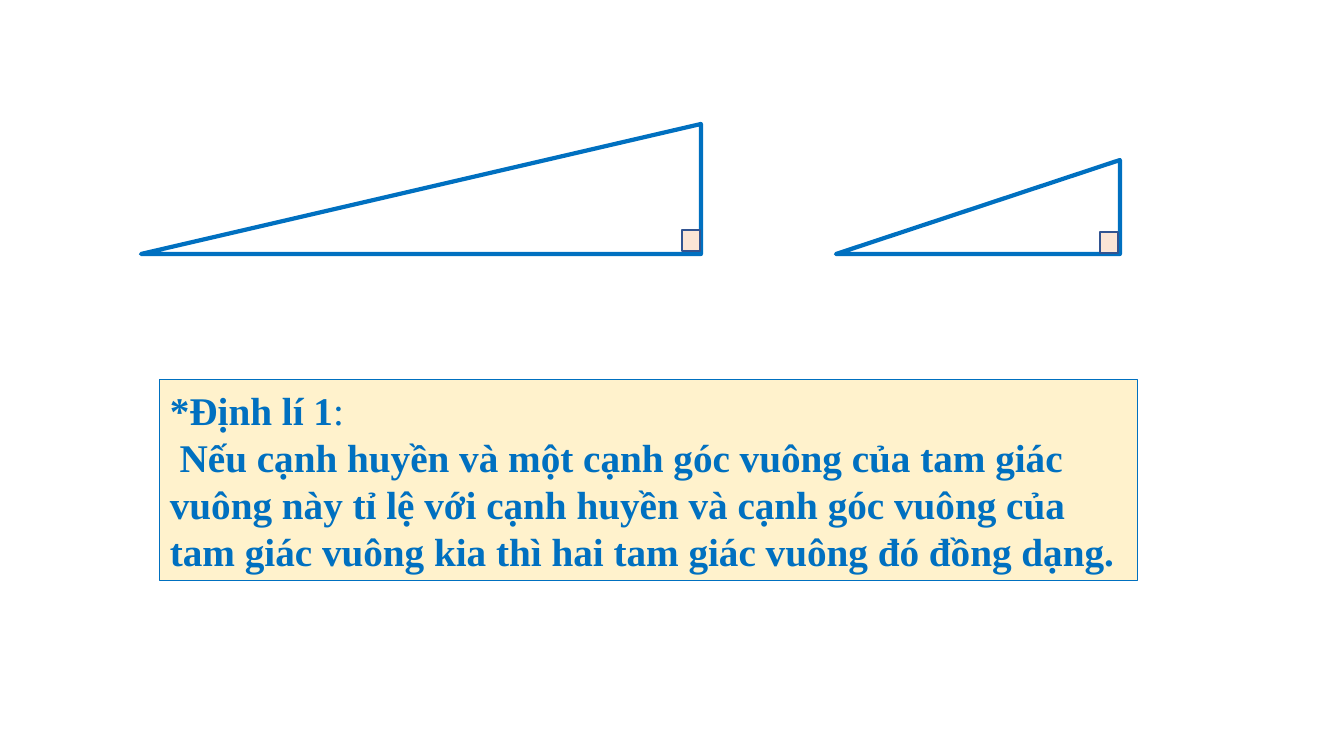
from pptx import Presentation
from pptx.dml.color import RGBColor
from pptx.enum.shapes import MSO_SHAPE
from pptx.enum.text import MSO_AUTO_SIZE, PP_ALIGN
from pptx.util import Pt

BLUE = RGBColor(0x00, 0x70, 0xC0)
NAVY = RGBColor(0x32, 0x54, 0x91)
CREAM = RGBColor(0xFF, 0xF2, 0xCC)
PEACH = RGBColor(0xFB, 0xE5, 0xD6)

SLIDE_SIZE = (1344, 756)
# Each right triangle: its box and the box of its right-angle mark (px)
TRIANGLES = [
    {"outline": (141, 124, 560, 130), "right_angle": (682, 230, 18, 21)},
    {"outline": (836, 160, 284, 94), "right_angle": (1100, 232, 18, 21)},
]
THEOREM_BOX = (160, 380, 978, 201)
# Paragraphs of (text, bold)
THEOREM = [
    [("*Định lí 1", True), (":", False)],
    [(" Nếu cạnh huyền và một cạnh góc vuông của tam giác vuông này "
      "tỉ lệ với cạnh huyền và cạnh góc vuông của tam giác vuông kia "
      "thì hai tam giác vuông đó đồng dạng.", True)],
]


def px(length):
    return round(length * 914400 / 100.8)


def add_outlined(slide, preset, box, line, width, fill=None):
    shape = slide.shapes.add_shape(preset, *map(px, box))
    shape.shadow.inherit = False
    if fill is None:
        shape.fill.background()
    else:
        shape.fill.solid()
        shape.fill.fore_color.rgb = fill
    shape.line.color.rgb = line
    shape.line.width = Pt(width)
    return shape


def add_run(paragraph, text, size=28, color=BLUE, bold=False, font="Times New Roman"):
    run = paragraph.add_run()
    run.text = text
    run.font.name = font
    run.font.size = Pt(size)
    run.font.bold = bold
    run.font.color.rgb = color


def add_triangle(slide, outline, right_angle):
    triangle = add_outlined(slide, MSO_SHAPE.RIGHT_TRIANGLE, outline, BLUE, 3)
    triangle._element.spPr.xfrm.set("flipH", "1")
    add_outlined(slide, MSO_SHAPE.FLOWCHART_PROCESS, right_angle, NAVY, 1, PEACH)


def add_theorem(slide):
    theorem = add_outlined(slide, MSO_SHAPE.RECTANGLE, THEOREM_BOX, BLUE, 0.75, CREAM)
    frame = theorem.text_frame
    frame.word_wrap = True
    frame.auto_size = MSO_AUTO_SIZE.SHAPE_TO_FIT_TEXT
    for index, runs in enumerate(THEOREM):
        paragraph = frame.add_paragraph() if index else frame.paragraphs[0]
        paragraph.alignment = PP_ALIGN.LEFT
        for text, bold in runs:
            add_run(paragraph, text, bold=bold)


def main():
    deck = Presentation()
    deck.slide_width, deck.slide_height = map(px, SLIDE_SIZE)
    slide = deck.slides.add_slide(deck.slide_layouts[6])
    add_theorem(slide)
    for triangle in TRIANGLES:
        add_triangle(slide, **triangle)
    deck.save("out.pptx")


if __name__ == "__main__":
    main()
